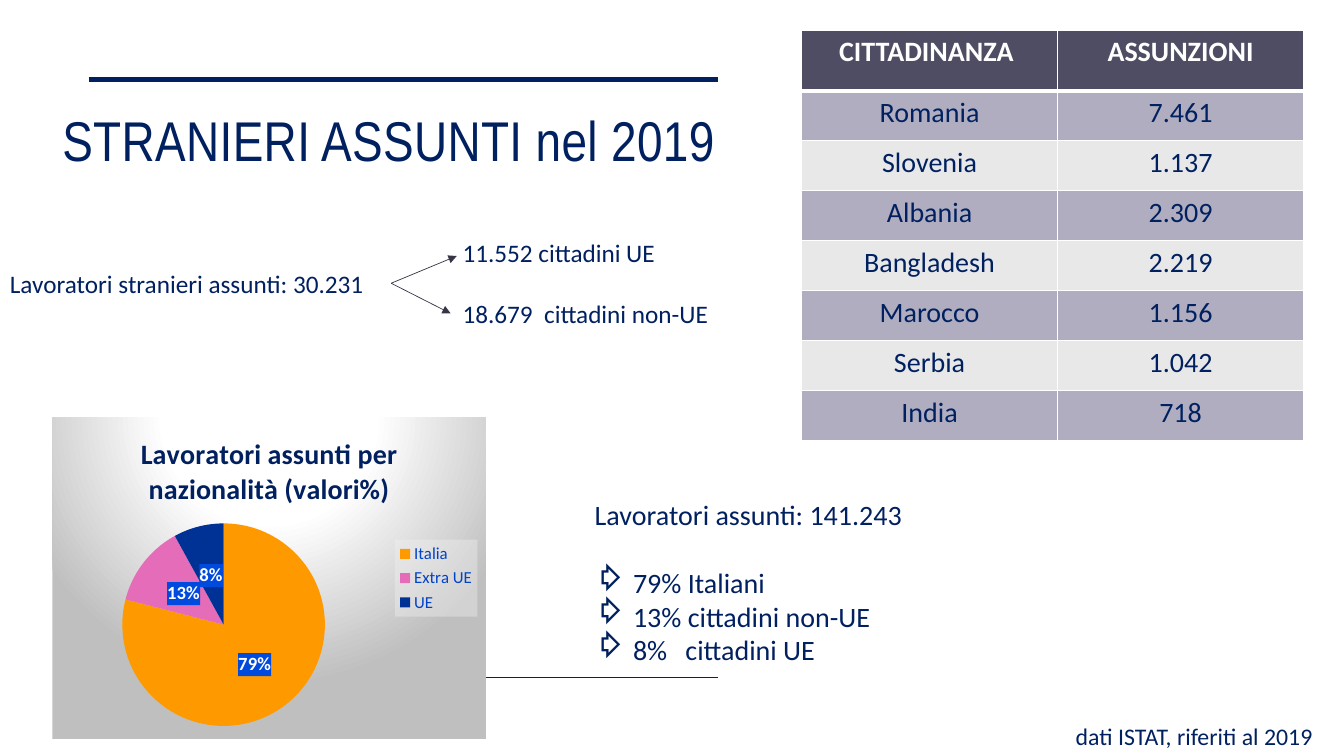
from lxml import etree
from pptx import Presentation, util as u
from pptx.chart import data
from pptx.dml.color import RGBColor
from pptx.enum import chart as charts, shapes, text
from pptx.oxml import parse_xml
from pptx.oxml.ns import nsdecls, qn

COLORS = {
    "navy": "002060", "white": "FFFFFF", "arrow": "363545", "header": "4F4D63",
    "odd": "AFADBF", "even": "E8E8E9", "key": "0042C8", "label": "004ADE",
    "Italia": "FF9900", "Extra UE": "E46CB9", "UE": "003296", "grey": "BFBFBF",
    "legend": "F2F2F2",
}
Inches = u.Inches


def add_span(para, words, size, color="navy", face="Calibri", bold=False):
    span = para.add_run()
    span.text = words
    span.font.size = u.Pt(size)
    span.font.name = face
    span.font.bold = bold
    span.font.color.rgb = RGBColor.from_string(COLORS[color])
    return span


def add_line(start, end, color, width):
    line = page.shapes.add_connector(
        shapes.MSO_CONNECTOR.STRAIGHT, *[Inches(v) for v in (*start, *end)])
    line.line.color.rgb = RGBColor.from_string(COLORS[color])
    line.line.width = u.Pt(width)
    etree.SubElement(line._element.spPr, qn("a:effectLst"))
    return line


deck = Presentation()
deck.slide_width, deck.slide_height = Inches(13.33), Inches(7.5)
page = deck.slides.add_slide(deck.slide_layouts[6])

for y, width in ((0.79, 3.5), (6.72, 1.2)):
    add_line((0.88, y), (7.12, y), "navy", width)

boxes = {}
for name, place, size, lines in (
    ("title", (0.52, 0.97, 7.27, 0.81), 40, ["STRANIERI ASSUNTI nel 2019"]),
    ("split", (4.49, 2.31, 3.03, 1.01), 18,
     ["11.552 cittadini UE", "18.679  cittadini non-UE"]),
    ("total", (0, 2.61, 3.88, 0.4), 18, ["Lavoratori stranieri assunti: 30.231"]),
    ("shares", (5.8, 4.89, 5.62, 1.78), 20,
     ["Lavoratori assunti: 141.243", "79% Italiani", "13% cittadini non-UE",
      "8%\tcittadini UE"]),
    ("source", (10.57, 7.11, 2.76, 0.39), 17, ["dati ISTAT, riferiti al 2019"]),
):
    box = page.shapes.add_textbox(*[Inches(v) for v in place])
    box.text_frame.word_wrap = True
    boxes[name] = box
    for i, words in enumerate(lines):
        para = box.text_frame.paragraphs[0] if i == 0 else box.text_frame.add_paragraph()
        face = "Arial Narrow" if name == "title" else "Calibri"
        add_span(para, words, size, face=face)
        if i == 1:
            para.space_before = u.Pt(size * 1.22)

title_frame = boxes["title"].text_frame
title_frame.vertical_anchor = text.MSO_ANCHOR.MIDDLE
title_frame.paragraphs[0].runs[0].font._element.set("spc", "30")

for para in boxes["shares"].text_frame.paragraphs[1:]:
    props = para._p.get_or_add_pPr()
    props.set("marL", str(Inches(0.38)))
    props.set("indent", str(-Inches(0.38)))
    color = etree.SubElement(props, qn("a:buClr"))
    etree.SubElement(color, qn("a:srgbClr"), val=COLORS["navy"])
    etree.SubElement(props, qn("a:buFont"), typeface="OpenSymbol")
    etree.SubElement(props, qn("a:buChar"), char="⇨")
    tabs = etree.SubElement(props, qn("a:tabLst"))
    etree.SubElement(tabs, qn("a:tab"), pos=str(Inches(0.9)), algn="l")

for end in ((4.53, 2.54), (4.47, 3.11)):
    arrow = add_line((3.88, 2.81), end, "arrow", 0.5)
    arrow.begin_connect(boxes["total"], 3)
    etree.SubElement(arrow.line._get_or_add_ln(), qn("a:tailEnd"), type="triangle")

hires = [
    ("CITTADINANZA ", "ASSUNZIONI"), ("Romania", "7.461"), ("Slovenia", "1.137"),
    ("Albania", "2.309"), ("Bangladesh", "2.219"), ("Marocco", "1.156"),
    ("Serbia", "1.042"), ("India", "718"),
]
table = page.shapes.add_table(
    len(hires), 2, Inches(7.95), Inches(0.3), Inches(4.98), Inches(4.07)).table
for column, width in zip(table.columns, (2.54, 2.44)):
    column.width = Inches(width)
for r, record in enumerate(hires):
    header = r == 0
    table.rows[r].height = Inches(0.6 if header else 3.47 / 7)
    for c, words in enumerate(record):
        cell = table.cell(r, c)
        para = cell.text_frame.paragraphs[0]
        para.alignment = text.PP_ALIGN.CENTER
        add_span(para, words, 20, "white" if header else "navy", bold=header)
        props = cell._tc.get_or_add_tcPr()
        for side in ("lnL", "lnR", "lnT", "lnB"):
            thick = header and side == "lnB"
            edge = etree.SubElement(props, qn("a:" + side), w=str(u.Pt(3 if thick else 1)))
            paint = etree.SubElement(edge, qn("a:solidFill"))
            etree.SubElement(paint, qn("a:srgbClr"), val=COLORS["white"])
        cell.fill.solid()
        fill = "header" if header else "odd" if r % 2 else "even"
        cell.fill.fore_color.rgb = RGBColor.from_string(COLORS[fill])

shares = data.CategoryChartData(number_format="0")
shares.categories = ["Italia", "Extra UE", "UE"]
shares.add_series("Series 1", (79, 13, 8))
pie = page.shapes.add_chart(
    charts.XL_CHART_TYPE.PIE, Inches(0.52), Inches(4.14), Inches(4.3), Inches(3.19),
    shares).chart
pie.font.name = "Calibri"
pie.font.size = u.Pt(10)
pie.font.color.rgb = RGBColor.from_string(COLORS["navy"])
pie.has_title = True
add_span(pie.chart_title.text_frame.paragraphs[0],
         "Lavoratori assunti per nazionalità (valori%)", 20, bold=True)
pie.chart_title.include_in_layout = False
pie.has_legend = True
pie.legend.position = charts.XL_LEGEND_POSITION.RIGHT
pie.legend.include_in_layout = False
pie.legend.font.size = u.Pt(12)
pie.legend.font.name = "Calibri"
pie.legend.font.color.rgb = RGBColor.from_string(COLORS["key"])

plot = pie.plots[0]
plot.vary_by_categories = True
series = plot.series[0]
for i, name in enumerate(plot.categories):
    slice_fill = series.points[i].format.fill
    slice_fill.solid()
    slice_fill.fore_color.rgb = RGBColor.from_string(COLORS[name])
labels = series.data_labels
labels.show_percentage = True
labels.show_value = False
labels.number_format = "0%"
labels.number_format_is_linked = False
labels.position = charts.XL_LABEL_POSITION.CENTER
labels.font.size = u.Pt(13.3)
labels.font.bold = True
labels.font.name = "Calibri"
labels.font.color.rgb = RGBColor.from_string(COLORS["white"])
labels._element.find(qn("c:numFmt")).addnext(parse_xml(
    f'<c:spPr {nsdecls("c", "a")}><a:solidFill><a:srgbClr val="{COLORS["label"]}"/>'
    '</a:solidFill></c:spPr>'))

chart_space = pie._chartSpace
legend = pie.legend._element
for owner, target, (x, y, w, h) in (
    (chart_space.chart.plotArea, '<c:layoutTarget val="inner"/>', (0.16, 0.33, 0.47, 0.63)),
    (legend, "", (0.79, 0.38, 0.19, 0.24)),
):
    for old in owner.findall(qn("c:layout")):
        owner.remove(old)
    layout = parse_xml(
        f'<c:layout {nsdecls("c")}><c:manualLayout>{target}<c:xMode val="edge"/>'
        f'<c:yMode val="edge"/><c:x val="{x}"/><c:y val="{y}"/><c:w val="{w}"/>'
        f'<c:h val="{h}"/></c:manualLayout></c:layout>')
    if target:
        owner.insert(0, layout)
    else:
        owner.find(qn("c:legendPos")).addnext(layout)
legend.find(qn("c:txPr")).addprevious(parse_xml(
    f'<c:spPr {nsdecls("c", "a")}><a:solidFill><a:srgbClr val="{COLORS["legend"]}">'
    '<a:alpha val="39000"/></a:srgbClr></a:solidFill></c:spPr>'))
stops = "".join(
    f'<a:gs pos="{pos * 1000}"><a:srgbClr val="{COLORS[name]}"/></a:gs>'
    for pos, name in ((0, "white"), (39, "white"), (100, "grey")))
chart_space.chart.addnext(parse_xml(
    f'<c:spPr {nsdecls("c", "a")}><a:gradFill><a:gsLst>{stops}</a:gsLst>'
    '<a:path path="circle"><a:fillToRect l="50000" t="-80000" r="50000" b="180000"/>'
    '</a:path></a:gradFill><a:ln><a:noFill/></a:ln></c:spPr>'))

deck.save("out.pptx")
